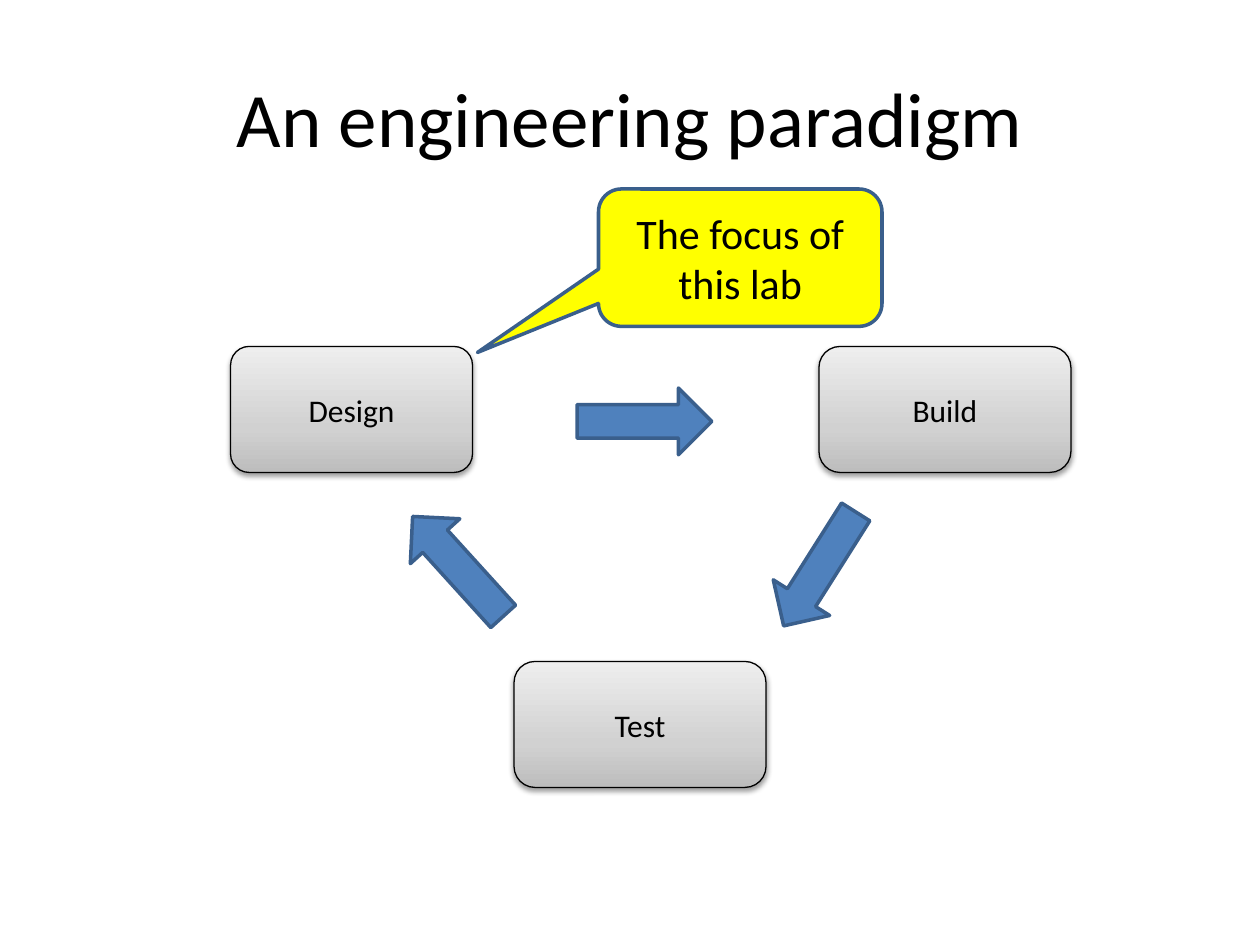
from dataclasses import dataclass

from lxml import etree
from pptx import Presentation
from pptx.dml.color import RGBColor
from pptx.enum.shapes import MSO_SHAPE
from pptx.enum.text import MSO_ANCHOR, PP_ALIGN
from pptx.oxml import parse_xml
from pptx.oxml.ns import nsdecls, qn
from pptx.util import Inches, Pt

ROUNDED = MSO_SHAPE.ROUNDED_RECTANGLE
CALLOUT = MSO_SHAPE.ROUNDED_RECTANGULAR_CALLOUT
RIGHT_ARROW = MSO_SHAPE.RIGHT_ARROW
UP_ARROW = MSO_SHAPE.UP_ARROW
MIDDLE = MSO_ANCHOR.MIDDLE
CENTER = PP_ALIGN.CENTER


@dataclass(frozen=True)
class Theme:
    font: str = "Calibri"
    ink: str = "000000"
    highlight: str = "FFFF00"
    arrow: str = "4F81BD"
    outline: str = "3A5F8C"
    step_gradient: tuple = ((0, "BDBDBD"), (35, "D1D1D1"), (100, "EEEEEE"))
    title_size: int = 44
    callout_size: int = 24
    step_size: int = 18


THEME = Theme()


def write(shape, text, size):
    """Put centred text in the shape."""
    frame = shape.text_frame
    frame.text = text
    frame.word_wrap = True
    frame.vertical_anchor = MIDDLE
    paragraph = frame.paragraphs[0]
    paragraph.alignment = CENTER
    font = paragraph.runs[0].font
    font.name = THEME.font
    font.size = Pt(size)
    font.color.rgb = RGBColor.from_string(THEME.ink)


def add_outlined(kind, left, top, width, height, line_color, line_width):
    shape = slide.shapes.add_shape(
        kind, Inches(left), Inches(top), Inches(width), Inches(height))
    shape.shadow.inherit = False
    shape.line.color.rgb = RGBColor.from_string(line_color)
    shape.line.width = Pt(line_width)
    return shape


prs = Presentation()
prs.slide_width = Inches(10)
prs.slide_height = Inches(7.5)
slide = prs.slides.add_slide(prs.slide_layouts[6])

title = slide.shapes.add_textbox(Inches(0.5), Inches(0.3), Inches(9), Inches(1.25))
write(title, "An engineering paradigm", THEME.title_size)

focus = add_outlined(CALLOUT, 4.75, 1.5, 2.25, 1.09, THEME.outline, 2)
focus.adjustments[0] = -0.927
focus.adjustments[1] = 0.69
focus.fill.solid()
focus.fill.fore_color.rgb = RGBColor.from_string(THEME.highlight)
write(focus, "The focus of this lab", THEME.callout_size)

# Steps of the cycle: label, left, top, width, corner rounding
steps = [
    ("Design", 1.83, 2.75, 1.92, 0.148),
    ("Build", 6.5, 2.75, 2, 0.167),
    ("Test", 4.08, 5.25, 2, 0.167),
]
for label, left, top, width, rounding in steps:
    step = add_outlined(ROUNDED, left, top, width, 1, THEME.ink, 0.75)
    step.adjustments[0] = rounding
    step.fill.gradient()
    step.fill.gradient_angle = 90
    properties = step._element.spPr
    stops = properties.find(".//" + qn("a:gsLst"))
    for stop in list(stops):
        stops.remove(stop)
    for position, color in THEME.step_gradient:
        stop = etree.SubElement(stops, qn("a:gs"), pos=str(position * 1000))
        etree.SubElement(stop, qn("a:srgbClr"), val=color)
    properties.find(qn("a:effectLst")).append(parse_xml(
        f'<a:outerShdw {nsdecls("a")} blurRad="{Pt(3.1)}" dist="{Pt(1.6)}" '
        'dir="5400000" rotWithShape="0">'
        f'<a:srgbClr val="{THEME.ink}"><a:alpha val="38000"/></a:srgbClr>'
        '</a:outerShdw>'))
    write(step, label, THEME.step_size)

# Arrows between the steps: kind, left, top, width, height, rotation
arrow_length, arrow_breadth = 1.07, 0.53
arrows = [
    (RIGHT_ARROW, 4.58, 3.08, arrow_length, arrow_breadth, 0),
    (RIGHT_ARROW, 5.97, 4.25, arrow_length, arrow_breadth, 122.3),
    (UP_ARROW, 3.37, 3.96, arrow_breadth, arrow_length, 317.8),
]
for kind, left, top, width, height, rotation in arrows:
    arrow = add_outlined(kind, left, top, width, height, THEME.outline, 2)
    arrow.rotation = rotation
    arrow.fill.solid()
    arrow.fill.fore_color.rgb = RGBColor.from_string(THEME.arrow)

prs.save("out.pptx")
